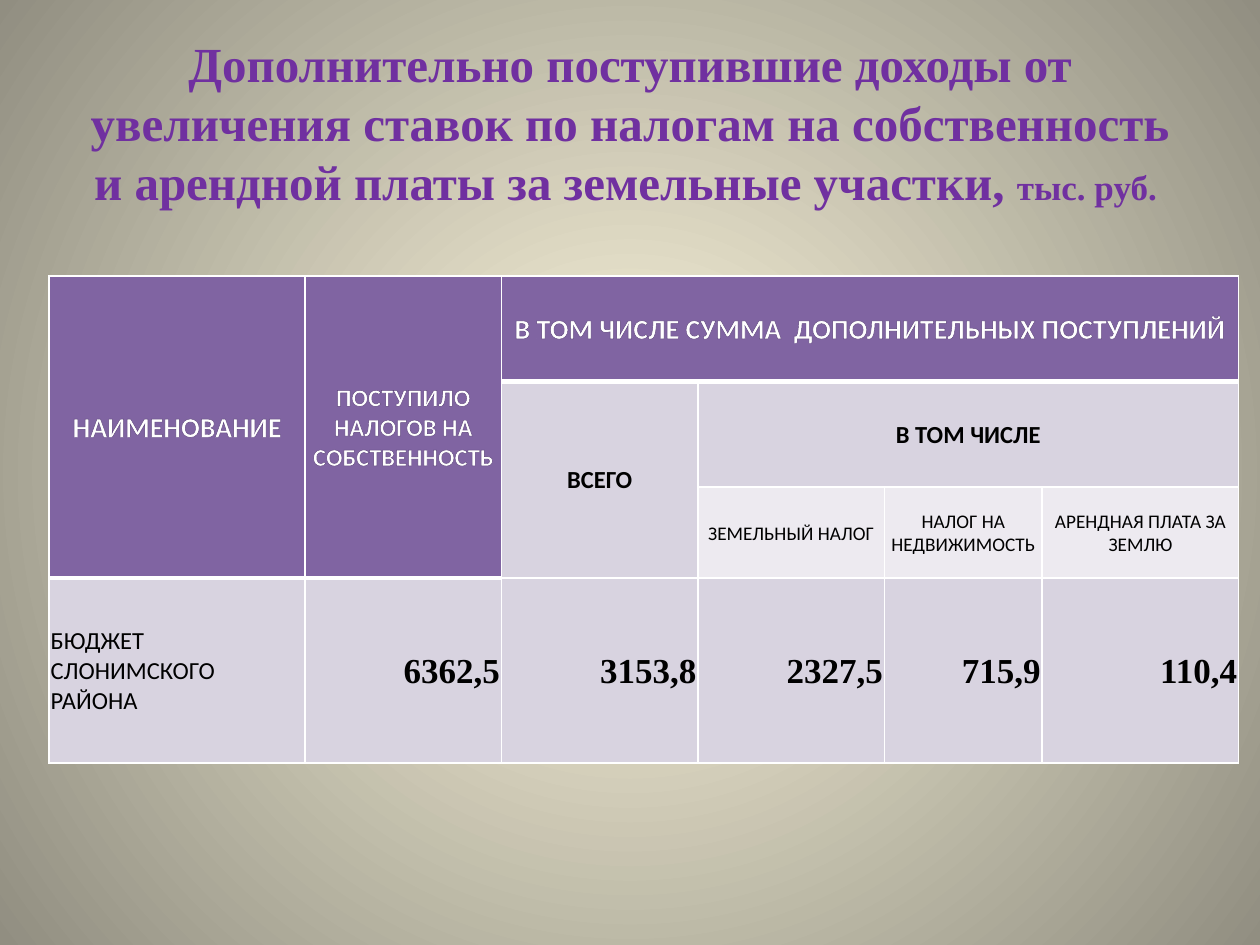
from lxml.etree import SubElement
from pptx import Presentation
from pptx.dml.color import RGBColor
from pptx.enum.text import MSO_ANCHOR as Anchor, PP_ALIGN as Align
from pptx.oxml.ns import qn
from pptx.util import Cm, Pt

COLORS = {
    "centre": "FCF7DD", "edge": "918E81", "title": "7030A0", "header": "8064A2",
    "band": "D8D3E0", "light": "EDEAF0", "white": "FFFFFF", "black": "000000",
    "outline": "5E457C",
}
SERIF, SANS = "Times New Roman", "Calibri"

TITLE = [
    ("Дополнительно поступившие доходы от увеличения ставок по налогам "
     "на собственность и арендной платы за земельные участки, ", 28),
    ("тыс. руб. ", 20),
]

COLUMN_WIDTHS = [5.16, 3.96, 3.96, 3.76, 3.18, 3.96]
ROW_HEIGHTS = [2.13, 2.13, 1.68, 3.73]

# style: font, size, bold, text colour, fill, alignment
STYLES = {
    "header": (SANS, 16, True, "white", "header", Align.CENTER),
    "small header": (SANS, 14, True, "white", "header", Align.CENTER),
    "group": (SANS, 14, True, "black", "band", Align.CENTER),
    "tax": (SANS, 11, False, "black", "light", Align.CENTER),
    "budget": (SANS, 14, False, "black", "band", Align.LEFT),
    "amount": (SERIF, 20, True, "black", "band", Align.RIGHT),
}

# row, column, rows spanned, columns spanned, style, text
CELLS = [
    (0, 0, 3, 1, "header", "НАИМЕНОВАНИЕ"),
    (0, 1, 3, 1, "small header", "ПОСТУПИЛО НАЛОГОВ НА СОБСТВЕННОСТЬ"),
    (0, 2, 1, 4, "header", "В ТОМ ЧИСЛЕ СУММА  ДОПОЛНИТЕЛЬНЫХ ПОСТУПЛЕНИЙ"),
    (1, 2, 2, 1, "group", "ВСЕГО"),
    (1, 3, 1, 3, "group", "В ТОМ ЧИСЛЕ"),
    (2, 3, 1, 1, "tax", "ЗЕМЕЛЬНЫЙ НАЛОГ"),
    (2, 4, 1, 1, "tax", "НАЛОГ НА НЕДВИЖИМОСТЬ"),
    (2, 5, 1, 1, "tax", "АРЕНДНАЯ ПЛАТА ЗА ЗЕМЛЮ"),
    (3, 0, 1, 1, "budget", "БЮДЖЕТ СЛОНИМСКОГО РАЙОНА"),
]
AMOUNTS = ["6362,5", "3153,8", "2327,5", "715,9", "110,4"]
CELLS += [(3, column, 1, 1, "amount", text)
          for column, text in enumerate(AMOUNTS, 1)]


def color(name):
    return RGBColor.from_string(COLORS[name])


def add_run(para, text, font, size, bold, color_name):
    run = para.add_run()
    run.text = text
    run.font.name, run.font.size, run.font.bold = font, Pt(size), bold
    run.font.color.rgb = color(color_name)
    return run


def fill_line(line, color_name):
    solid = SubElement(line, qn("a:solidFill"))
    SubElement(solid, qn("a:srgbClr"), val=COLORS[color_name])


def outline_text(run):
    properties = run.font._element
    line = properties.makeelement(qn("a:ln"), {"w": str(Pt(0.71))})
    fill_line(line, "outline")
    properties.insert(0, line)


def is_header(row, column):
    return row == 0 or (column < 2 and row < 3)


def set_borders(cell, row, column):
    """Thin white lines, with a thick one under the header cells."""
    below_header = row > 0 and is_header(row - 1, column)
    thick_top = below_header and not is_header(row, column)
    widths = {"L": 1, "R": 1, "T": 3 if thick_top else 1,
              "B": 3 if is_header(row, column) else 1}
    properties = cell._tc.get_or_add_tcPr()
    for position, (side, width) in enumerate(widths.items()):
        line = properties.makeelement(qn("a:ln" + side), {"w": str(Pt(width))})
        fill_line(line, "white")
        properties.insert(position, line)


def set_background(slide):
    """Circular gradient from the middle of the slide."""
    fill = slide.background.fill
    fill.gradient()
    for stop, position, name in zip(fill.gradient_stops, (0, 1), ("centre", "edge")):
        stop.position = position
        stop.color.rgb = color(name)
    gradient = slide.element.find(".//" + qn("a:gradFill"))
    gradient.remove(gradient.find(qn("a:lin")))
    circle = SubElement(gradient, qn("a:path"), path="circle")
    SubElement(circle, qn("a:fillToRect"), {side: "50000" for side in "ltrb"})


def add_title(slide):
    title = slide.shapes.title
    title.left, title.top, title.width, title.height = (
        Cm(1.27), Cm(0.58), Cm(22.86), Cm(3.76))
    title.text_frame.vertical_anchor = Anchor.MIDDLE
    para = title.text_frame.paragraphs[0]
    para.alignment = Align.CENTER
    for text, size in TITLE:
        add_run(para, text, SERIF, size, True, "title")


def add_tax_table(slide):
    table = slide.shapes.add_table(
        len(ROW_HEIGHTS), len(COLUMN_WIDTHS), Cm(0.99), Cm(5.56),
        Cm(sum(COLUMN_WIDTHS)), Cm(sum(ROW_HEIGHTS))).table
    table.first_row = table.horz_banding = False
    for column, width in zip(table.columns, COLUMN_WIDTHS):
        column.width = Cm(width)
    for row, height in zip(table.rows, ROW_HEIGHTS):
        row.height = Cm(height)

    for row, column, row_span, column_span, style, text in CELLS:
        font, size, bold, text_color, fill, alignment = STYLES[style]
        cell = table.cell(row, column)
        if row_span * column_span > 1:
            cell.merge(table.cell(row + row_span - 1, column + column_span - 1))
        for r in range(row, row + row_span):
            for c in range(column, column + column_span):
                part = table.cell(r, c)
                part.fill.solid()
                part.fill.fore_color.rgb = color(fill)
                set_borders(part, r, c)
        cell.vertical_anchor = Anchor.MIDDLE
        cell.margin_left = cell.margin_right = cell.margin_top = Cm(0.03)
        cell.margin_bottom = 0
        para = cell.text_frame.paragraphs[0]
        para.alignment = alignment
        run = add_run(para, text, font, size, bold, text_color)
        if style != "amount":
            outline_text(run)


def main():
    deck = Presentation()
    deck.slide_width, deck.slide_height = Cm(25.4), Cm(19.05)
    slide = deck.slides.add_slide(deck.slide_layouts[5])
    set_background(slide)
    add_title(slide)
    add_tax_table(slide)
    deck.save("out.pptx")


if __name__ == "__main__":
    main()
